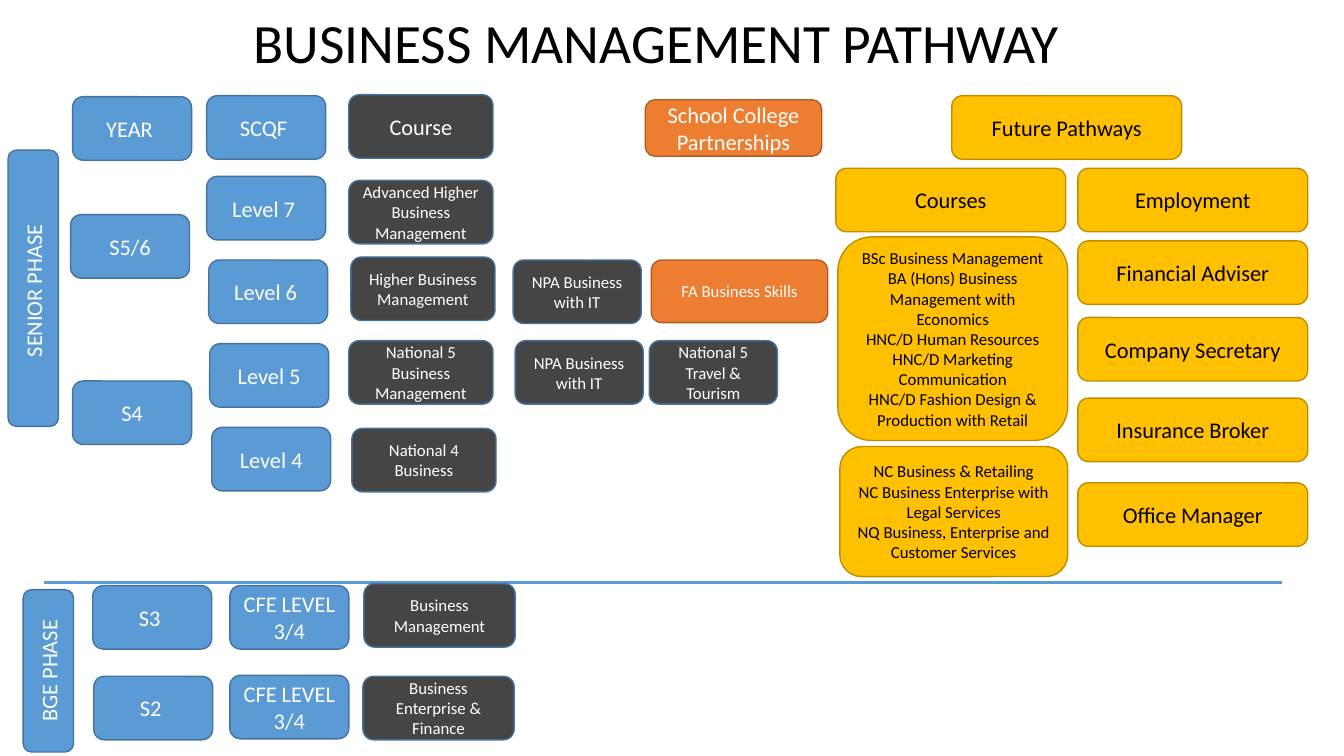
from dataclasses import dataclass
from typing import NamedTuple

from lxml import etree
from pptx import Presentation
from pptx.dml.color import RGBColor
from pptx.enum.shapes import MSO_CONNECTOR, MSO_SHAPE
from pptx.enum.text import MSO_ANCHOR, PP_ALIGN
from pptx.oxml.ns import qn
from pptx.shapes.autoshape import Shape
from pptx.slide import Slide
from pptx.text.text import TextFrame
from pptx.util import Emu, Pt

ROUNDED = MSO_SHAPE.ROUNDED_RECTANGLE
STRAIGHT = MSO_CONNECTOR.STRAIGHT
MIDDLE = MSO_ANCHOR.MIDDLE
CENTER = PP_ALIGN.CENTER
EMU_PER_PX = 9144


class Style(NamedTuple):
    fill: str
    line: str
    text: str


@dataclass(frozen=True)
class Theme:
    font: str = "Calibri"
    title_size: float = 39.6
    heading_size: float = 16
    detail_size: float = 12
    outline: float = 1
    divider: float = 2.25
    title_color: str = "000000"
    divider_color: str = "5B9BD5"
    stage: Style = Style("5B9BD5", "43739E", "FFFFFF")
    course: Style = Style("454545", "43739E", "FFFFFF")
    college: Style = Style("ED7D31", "AF5C24", "FFFFFF")
    future: Style = Style("FFC000", "BD8E00", "000000")


THEME = Theme()


class Box(NamedTuple):
    text: str
    left: int
    top: int


@dataclass(frozen=True)
class Group:
    style: Style
    size: float
    width: int
    height: int
    boxes: list[Box]
    vertical: bool = False


EMPLOYMENT_LEFT = 1069
EMPLOYMENT = {
    "Employment": 167,
    "Financial Adviser": 239,
    "Company Secretary": 315,
    "Insurance Broker": 395,
    "Office Manager": 479,
}
DEGREES = """BSc Business Management
BA (Hons) Business Management with Economics
HNC/D Human Resources
HNC/D Marketing Communication
HNC/D Fashion Design & Production with Retail"""
CERTIFICATES = """NC Business & Retailing
NC Business Enterprise with Legal Services
NQ Business, Enterprise and Customer Services"""

GROUPS = [
    Group(THEME.stage, THEME.heading_size, 118, 63, [
        Box("YEAR ", 72, 96),
        Box("S5/6", 70, 213),
        Box("S4", 72, 378),
        Box("S3 ", 92, 581),
        Box("S2 ", 93, 671),
        Box("SCQF ", 205, 95),
        Box("Level 7 ", 205, 175),
        Box("Level 6 ", 207, 258),
        Box("Level 5", 208, 341),
        Box("Level 4", 210, 424),
        Box("CFE LEVEL 3/4", 228, 581),
        Box("CFE LEVEL 3/4", 228, 670),
    ]),
    Group(THEME.stage, THEME.heading_size, 50, 274,
          [Box("SENIOR PHASE ", 8, 149)], vertical=True),
    Group(THEME.stage, THEME.heading_size, 50, 161,
          [Box("BGE PHASE", 23, 585)], vertical=True),
    Group(THEME.course, THEME.heading_size, 143, 63, [Box("Course", 346, 94)]),
    Group(THEME.course, THEME.detail_size, 143, 63, [
        Box("Advanced Higher Business Management", 346, 179),
        Box("Higher Business Management", 348, 255),
        Box("National 5 Business Management", 346, 338),
        Box("National 4 Business", 349, 425),
    ]),
    Group(THEME.course, THEME.detail_size, 127, 63, [
        Box("NPA Business\nwith IT", 509, 258),
        Box("NPA Business\nwith IT", 511, 338),
        Box("National 5\nTravel & Tourism", 644, 338),
    ]),
    Group(THEME.course, THEME.detail_size, 150, 63, [
        Box("Business Management", 361, 579),
        Box("Business Enterprise & Finance", 360, 671),
    ]),
    Group(THEME.college, THEME.heading_size, 175, 56,
          [Box("School College Partnerships", 640, 99)]),
    Group(THEME.college, THEME.detail_size, 175, 62,
          [Box("FA Business Skills", 646, 258)]),
    Group(THEME.future, THEME.heading_size, 228, 63, [
        Box("Future Pathways", 944, 95),
        Box("Courses", 829, 167),
        *(Box(text, EMPLOYMENT_LEFT, top) for text, top in EMPLOYMENT.items()),
    ]),
    Group(THEME.future, THEME.detail_size, 228, 202, [Box(DEGREES, 831, 235)]),
    Group(THEME.future, THEME.detail_size, 226, 129, [Box(CERTIFICATES, 833, 443)]),
]


def px(length: int) -> Emu:
    return Emu(length * EMU_PER_PX)


def rgb(color: str) -> RGBColor:
    return RGBColor.from_string(color)


def write_text(frame: TextFrame, text: str, *, size: float, color: str,
               line_spacing: float = 1.0) -> None:
    frame.word_wrap = True
    frame.vertical_anchor = MIDDLE
    for index, content in enumerate(text.split("\n")):
        paragraph = frame.add_paragraph() if index else frame.paragraphs[0]
        paragraph.alignment = CENTER
        paragraph.line_spacing = line_spacing
        run = paragraph.add_run()
        run.text = content
        run.font.name = THEME.font
        run.font.size = Pt(size)
        run.font.color.rgb = rgb(color)


def draw_box(slide: Slide, box: Box, group: Group) -> Shape:
    shape = slide.shapes.add_shape(
        ROUNDED, px(box.left), px(box.top), px(group.width), px(group.height))
    shape.shadow.inherit = False
    shape.fill.solid()
    shape.fill.fore_color.rgb = rgb(group.style.fill)
    shape.line.color.rgb = rgb(group.style.line)
    shape.line.width = Pt(THEME.outline)
    write_text(shape.text_frame, box.text, size=group.size, color=group.style.text)
    if group.vertical:
        shape.element.txBody.find(qn("a:bodyPr")).set("vert", "vert270")
    return shape


def draw_title(slide: Slide) -> None:
    title = slide.shapes.add_textbox(px(195), px(14), px(912), px(63))
    write_text(title.text_frame, "BUSINESS MANAGEMENT PATHWAY",
               size=THEME.title_size, color=THEME.title_color, line_spacing=0.9)


def draw_divider(slide: Slide) -> None:
    divider = slide.shapes.add_connector(STRAIGHT, px(44), px(578), px(1272), px(578))
    divider.line.color.rgb = rgb(THEME.divider_color)
    divider.line.width = Pt(THEME.divider)
    etree.SubElement(divider.element.spPr, qn("a:effectLst"))


def main() -> None:
    presentation = Presentation()
    presentation.slide_width = px(1333)
    presentation.slide_height = px(750)
    slide = presentation.slides.add_slide(presentation.slide_layouts[6])
    draw_title(slide)
    draw_divider(slide)
    for group in GROUPS:
        for box in group.boxes:
            draw_box(slide, box, group)
    presentation.save("out.pptx")


if __name__ == "__main__":
    main()
